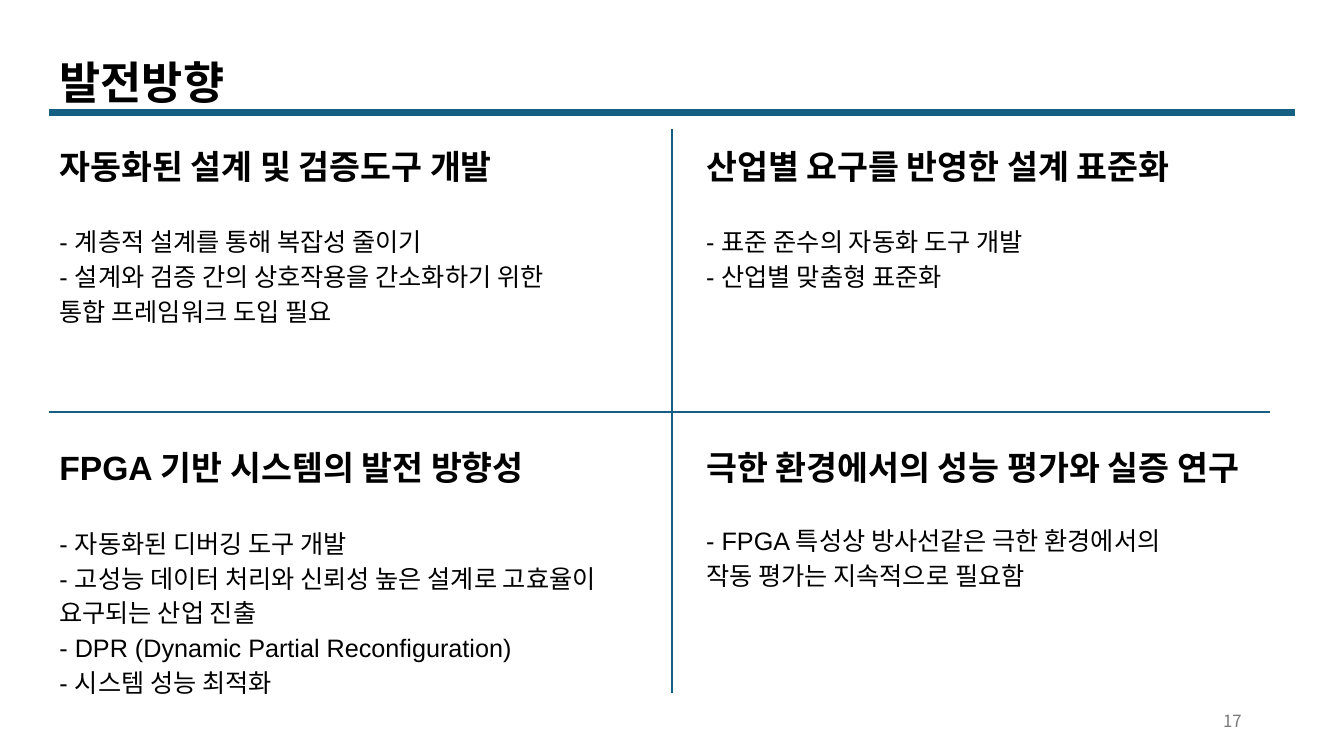
from dataclasses import dataclass

from lxml import etree
from pptx import Presentation
from pptx import util as u
from pptx.dml.color import RGBColor
from pptx.enum import shapes, text
from pptx.oxml.ns import qn

PX = 9525  # EMU per px, 96 px to the inch
BLACK = RGBColor(0x00, 0x00, 0x00)
GREY = RGBColor(0x79, 0x79, 0x79)
TEAL = RGBColor(0x15, 0x60, 0x82)

LEFT, RIGHT = 47, 663
UPPER, LOWER = 128, 415

HEADING = {"size": u.Pt(24), "bold": True, "name": "Arial"}
ITEM = {"size": u.Pt(18), "bold": False, "name": "Arial"}


@dataclass(frozen=True)
class Rule:
    x1: int
    y1: int
    x2: int
    y2: int
    weight: float


@dataclass(frozen=True)
class Quadrant:
    x: int
    y: int
    width: int
    height: int
    gap: int  # points between heading and items
    heading: str
    items: tuple[str, ...]


RULES = (
    Rule(LEFT, 107, 1233, 107, 4.5),
    Rule(640, 123, 640, 660, 1.5),
    Rule(LEFT, 392, 1210, 392, 1.5),
)

QUADRANTS = (
    Quadrant(LEFT, UPPER, 541, 226, 26, "자동화된 설계 및 검증도구 개발", (
        "- 계층적 설계를 통해 복잡성 줄이기",
        "- 설계와 검증 간의 상호작용을 간소화하기 위한",
        "통합 프레임워크 도입 필요",
    )),
    Quadrant(RIGHT, UPPER, 561, 192, 26, "산업별 요구를 반영한 설계 표준화", (
        "- 표준 준수의 자동화 도구 개발",
        "- 산업별 맞춤형 표준화",
    )),
    Quadrant(LEFT, LOWER, 541, 293, 26, "FPGA 기반 시스템의 발전 방향성", (
        "- 자동화된 디버깅 도구 개발",
        "- 고성능 데이터 처리와 신뢰성 높은 설계로 고효율이 요구되는 산업 진출",
        "- DPR (Dynamic Partial Reconfiguration)",
        "- 시스템 성능 최적화",
    )),
    Quadrant(RIGHT, LOWER, 589, 152, 24, "극한 환경에서의 성능 평가와 실증 연구", (
        "- FPGA 특성상 방사선같은 극한 환경에서의\n작동 평가는 지속적으로 필요함",
    )),
)


def apply(target, values: dict) -> None:
    for name, value in values.items():
        setattr(target, name, value)


def place(box, x: int, y: int, width: int, height: int) -> None:
    apply(box, {"left": x * PX, "top": y * PX,
                "width": width * PX, "height": height * PX})


def write(paragraph, words: str, font: dict, colour: RGBColor = BLACK,
          **layout) -> None:
    paragraph.text = words
    apply(paragraph, layout)
    for run in paragraph.runs:
        apply(run.font, font)
        run.font.color.rgb = colour


def draw_rule(slide, rule: Rule) -> None:
    line = slide.shapes.add_connector(
        shapes.MSO_CONNECTOR.STRAIGHT,
        *(n * PX for n in (rule.x1, rule.y1, rule.x2, rule.y2)))
    line.line.color.rgb = TEAL
    line.line.width = u.Pt(rule.weight)
    etree.SubElement(line._element.spPr, qn("a:effectLst"))


def fill_quadrant(body, quadrant: Quadrant) -> None:
    place(body, quadrant.x, quadrant.y, quadrant.width, quadrant.height)
    frame = body.text_frame
    apply(frame, {"word_wrap": True, "vertical_anchor": text.MSO_ANCHOR.TOP,
                  "auto_size": text.MSO_AUTO_SIZE.SHAPE_TO_FIT_TEXT})
    for index, words in enumerate((quadrant.heading, *quadrant.items)):
        paragraph = frame.add_paragraph() if index else frame.paragraphs[0]
        write(paragraph, words, ITEM if index else HEADING,
              line_spacing=1.15, space_after=u.Pt(0),
              space_before=u.Pt(quadrant.gap if index == 1 else 0),
              alignment=text.PP_ALIGN.LEFT)
        # The dashes are typed, so the layout's bullets are switched off
        properties = paragraph._p.get_or_add_pPr()
        properties.set("marL", "0")
        properties.set("indent", "0")
        etree.SubElement(properties, qn("a:buNone"))


def main() -> None:
    deck = Presentation()
    apply(deck, {"slide_width": 1280 * PX, "slide_height": 720 * PX})
    slide = deck.slides.add_slide(deck.slide_layouts.get_by_name("Comparison"))

    # Title
    title = slide.shapes.title
    place(title, LEFT, 40, 192, 63)
    apply(title.text_frame, {
        "word_wrap": False, "vertical_anchor": text.MSO_ANCHOR.TOP,
        "auto_size": text.MSO_AUTO_SIZE.SHAPE_TO_FIT_TEXT})
    write(title.text_frame.paragraphs[0], "발전방향",
          {"size": u.Pt(32), "bold": True, "name": "Arial"},
          line_spacing=1.15, alignment=text.PP_ALIGN.LEFT)

    # Dividing lines
    for rule in RULES:
        draw_rule(slide, rule)

    # Four directions, one per body placeholder
    bodies = [p for p in slide.placeholders if p.placeholder_format.idx > 0]
    for body, quadrant in zip(bodies, QUADRANTS):
        fill_quadrant(body, quadrant)

    # Page number
    page = slide.shapes.add_textbox(904 * PX, 667 * PX, 288 * PX, 38 * PX)
    apply(page.text_frame, {"word_wrap": True,
                            "vertical_anchor": text.MSO_ANCHOR.MIDDLE})
    write(page.text_frame.paragraphs[0], "17",
          {"size": u.Pt(12), "name": "Noto Sans CJK KR"}, GREY,
          alignment=text.PP_ALIGN.RIGHT)

    deck.save("out.pptx")


if __name__ == "__main__":
    main()
